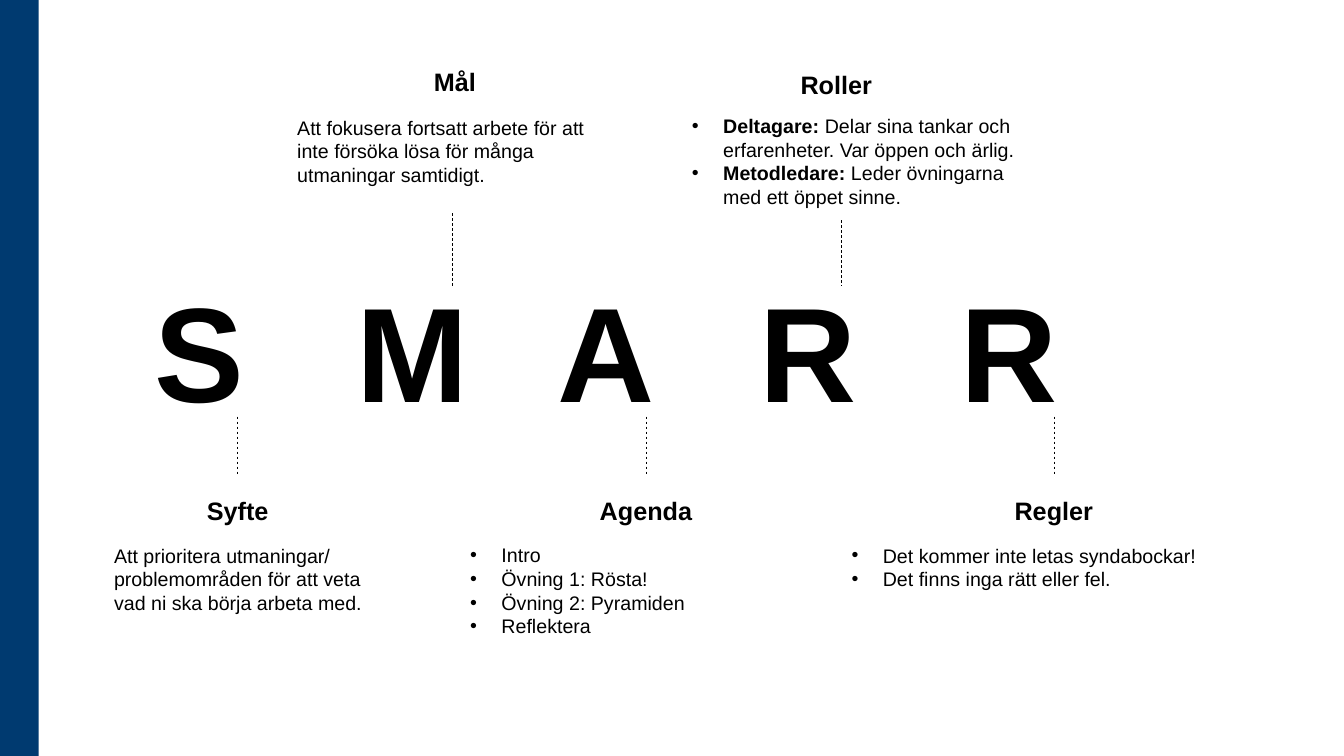
from lxml.etree import SubElement as Sub
from pptx import Presentation as Deck
from pptx.dml.color import RGBColor as Color
from pptx.enum.dml import MSO_LINE as Dash
from pptx.enum.shapes import MSO_CONNECTOR as Join, MSO_SHAPE as Form
from pptx.enum.text import PP_ALIGN as Align
from pptx.oxml.ns import qn
from pptx.util import Inches, Pt

COLS, ROWS = 160, 90
CELL = Inches(1) / 12
NAVY, BLACK = "003A70", "000000"


def cells(*nums):
    return [round(num * CELL) for num in nums]


def paint(hue):
    return Color.from_string(hue)


class Page:
    """Holds the text style and the current slide, and draws each kind of element."""

    def __init__(self, deck, font="Arial", ink=BLACK):
        self.slide = deck.slides.add_slide(deck.slide_layouts[6])
        self.font, self.ink = font, ink

    def bar(self, x, y, w, h, hue):
        bar = self.slide.shapes.add_shape(Form.RECTANGLE, *cells(x, y, w, h))
        bar.shadow.inherit = False
        bar.fill.solid()
        bar.fill.fore_color.rgb = paint(hue)
        bar.line.fill.background()

    def line(self, x, top, end):
        line = self.slide.shapes.add_connector(Join.STRAIGHT, *cells(x, top, x, end))
        line.line.color.rgb = paint(self.ink)
        line.line.width = Pt(0.5)
        line.line.dash_style = Dash.DASH
        Sub(line._element.spPr, qn("a:effectLst"))

    def frame(self, x, y, w, h):
        frame = self.slide.shapes.add_textbox(*cells(x, y, w, h)).text_frame
        frame.word_wrap = True
        return frame

    def style(self, run, size, bold=False):
        run.font.name, run.font.size, run.font.bold = self.font, Pt(size), bold
        run.font.color.rgb = paint(self.ink)

    def word(self, text, x, y, w, h=4.8):
        para = self.frame(x, y, w, h).paragraphs[0]
        para.text = text
        para.alignment = Align.CENTER
        self.style(para.runs[0], 18, True)

    def letters(self, text, x, y, w, h, step):
        para = self.frame(x, y, w, h).paragraphs[0]
        para.text = "\t".join(text)
        stops = Sub(para._p.get_or_add_pPr(), qn("a:tabLst"))
        for num in range(1, len(text)):
            Sub(stops, qn("a:tab"), pos=str(cells(num * step)[0]), algn="l")
        for run in para.runs:
            self.style(run, 96, True)

    def body(self, text, x, y, w, h):
        para = self.frame(x, y, w, h).paragraphs[0]
        para.text = text
        for run in para.runs:
            self.style(run, 14)

    def bullets(self, items, x, y, w, h):
        frame = self.frame(x, y, w, h)
        for num, (lead, text) in enumerate(items):
            para = frame.add_paragraph() if num else frame.paragraphs[0]
            props = para._p.get_or_add_pPr()
            props.set("marL", str(Inches(0.31)))
            props.set("indent", str(-Inches(0.31)))
            Sub(props, qn("a:buFont"), typeface="Arial")
            Sub(props, qn("a:buChar"), char="•")
            for part, bold in ((lead, True), (text, False)):
                if part:
                    run = para.add_run()
                    run.text = part
                    self.style(run, 14, bold)


def main():
    deck = Deck()
    deck.slide_width, deck.slide_height = cells(COLS, ROWS)
    page = Page(deck)
    page.bar(0, 0, 4.6, ROWS, NAVY)
    page.letters("SMARR", 17.2, 31.3, 118, 20.6, step=24)

    for x in (28.2, 76.9, 125.5):
        page.line(x, 49.6, 56.4)
    page.line(53.8, 25.4, 34.1)
    page.line(100.2, 26.2, 34.1)

    for text, x, w in (("Syfte", 14.5, 27.6), ("Agenda", 63.1, 27.6), ("Regler", 110.4, 30.1)):
        page.word(text, x, 58.4, w)
    page.word("Mål", 40.6, 7.3, 27.1)
    page.word("Roller", 77.3, 7.7, 44.5)

    page.body("Att prioritera utmaningar/\nproblemområden för att veta\nvad ni ska börja arbeta med.",
              12.4, 64.1, 38.6, 9.7)
    page.body("Att fokusera fortsatt arbete för att\ninte försöka lösa för många utmaningar samtidigt.",
              34.2, 13.2, 41.6, 9.7)
    page.bullets([("", "Intro"), ("", "Övning 1: Rösta!"),
                  ("", "Övning 2: Pyramiden"), ("", "Reflektera")], 54.8, 64.1, 46.2, 12.5)
    page.bullets([("", "Det kommer inte letas syndabockar!"),
                  ("", "Det finns inga rätt eller fel.")], 100.2, 64.1, 51.7, 6.8)
    page.bullets([("Deltagare: ", "Delar sina tankar och erfarenheter. Var öppen och ärlig."),
                  ("Metodledare: ", "Leder övningarna med ett öppet sinne.")], 81.2, 13, 44.5, 18.1)
    deck.save("out.pptx")


if __name__ == "__main__":
    main()
